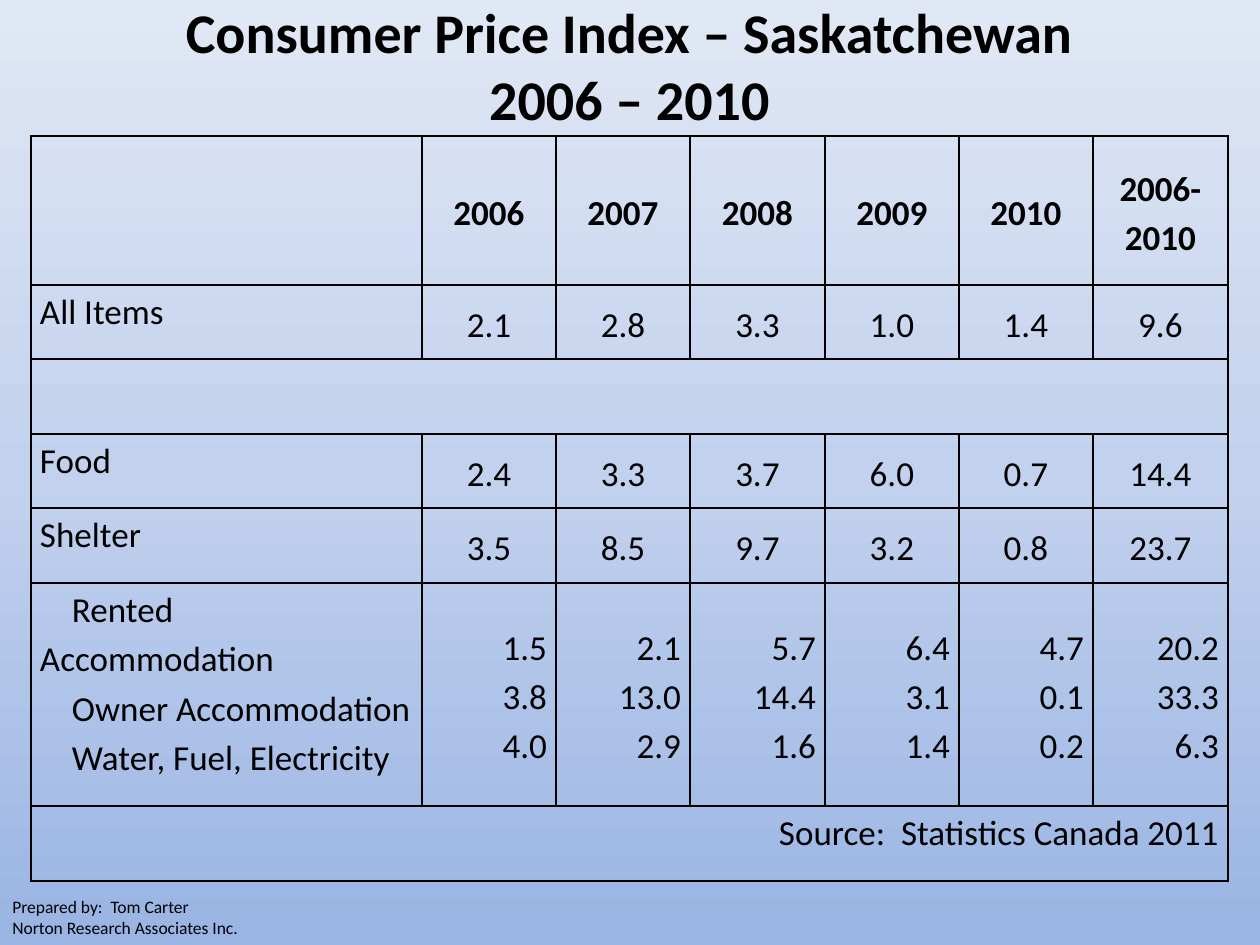
import copy
import itertools
from dataclasses import dataclass

import pptx
import pptx.dml.color
import pptx.enum.text
import pptx.oxml
import pptx.oxml.ns
import pptx.util
from lxml import etree

ALIGN = pptx.enum.text.PP_ALIGN
ANCHOR = pptx.enum.text.MSO_ANCHOR
AUTO_SIZE = pptx.enum.text.MSO_AUTO_SIZE
qn = pptx.oxml.ns.qn

EMU_PER_PX = 914400 / 126
PAGE_SIZE = (1260, 945)


@dataclass(frozen=True)
class Theme:
    font: str = "Calibri"
    ink: str = "000000"
    backdrop: tuple = ("9AB5E4", "C2D1ED", "E1E8F5")
    title_size: int = 32
    table_size: int = 20
    caption_size: int = 10
    table_spacing: float = 1.15
    border_pt: int = 1


def px(length):
    return pptx.util.Emu(round(length * EMU_PER_PX))


def set_all(target, values):
    for name, value in values.items():
        setattr(target, name, value)


def split(total, weights):
    """Share a length by weight into whole px that add up to the total."""
    edges = [0] + [total * part // sum(weights)
                   for part in itertools.accumulate(weights)]
    return [end - start for start, end in zip(edges, edges[1:])]


class SlideBuilder:
    def __init__(self, page, theme):
        self.page = page
        self.theme = theme

    def place(self, shape, left, top, width, height):
        set_all(shape, {"left": px(left), "top": px(top),
                        "width": px(width), "height": px(height)})

    def add_lines(self, frame, lines, size, bold=False, indent=0, **para_format):
        for index, line in enumerate(lines):
            para = frame.add_paragraph() if index else frame.paragraphs[0]
            set_all(para, para_format)
            if indent:
                para._p.get_or_add_pPr().set("indent", str(px(indent)))
            span = para.add_run()
            span.text = line
            set_all(span.font, {"name": self.theme.font, "bold": bold,
                                "size": pptx.util.Pt(size)})
            span.font.color.rgb = pptx.dml.color.RGBColor.from_string(self.theme.ink)

    def backdrop(self):
        """Fill the page with evenly spaced colours, from bottom to top."""
        fill = self.page.background.fill
        fill.gradient()
        fill.gradient_angle = 90
        colours = self.theme.backdrop
        stop_list = self.page.element.find(".//" + qn("a:gsLst"))
        while len(stop_list) < len(colours):
            stop_list.append(copy.deepcopy(stop_list[-1]))
        for index, (stop, colour) in enumerate(zip(fill.gradient_stops, colours)):
            stop.position = index / (len(colours) - 1)
            stop.color.rgb = pptx.dml.color.RGBColor.from_string(colour)

    def title(self, lines, *bounds):
        box = self.page.shapes.title
        self.place(box, *bounds)
        set_all(box.text_frame, {"word_wrap": True, "auto_size": AUTO_SIZE.NONE,
                                 "vertical_anchor": ANCHOR.TOP})
        self.add_lines(box.text_frame, lines, self.theme.title_size, bold=True,
                       alignment=ALIGN.CENTER)

    def caption(self, lines, *bounds):
        box = self.page.shapes.add_textbox(*map(px, bounds))
        box.text_frame.word_wrap = True
        self.add_lines(box.text_frame, lines, self.theme.caption_size)

    def table(self, left, top, widths, heights):
        frame = self.page.shapes.add_table(
            len(heights), len(widths), px(left), px(top),
            px(sum(widths)), px(sum(heights)))
        table = frame.table
        set_all(table, {"first_row": False, "horz_banding": False})
        for column, width in zip(table.columns, widths):
            column.width = px(width)
        for row, height in zip(table.rows, heights):
            row.height = px(height)
        for cell in table.iter_cells():
            self.style_cell(cell)
        return table

    def style_cell(self, cell):
        set_all(cell, {"margin_left": px(9), "margin_right": px(9),
                       "margin_top": 0, "margin_bottom": 0})
        cell.fill.background()
        properties = cell._tc.get_or_add_tcPr()
        for index, side in enumerate(("lnL", "lnR", "lnT", "lnB")):
            line = etree.Element(qn("a:" + side),
                                 w=str(pptx.util.Pt(self.theme.border_pt)))
            fill = etree.SubElement(line, qn("a:solidFill"))
            etree.SubElement(fill, qn("a:srgbClr"), val=self.theme.ink)
            properties.insert(index, line)

    def cell_text(self, cell, lines, align, anchor=ANCHOR.TOP, **text_format):
        cell.vertical_anchor = anchor
        self.add_lines(cell.text_frame, lines, self.theme.table_size,
                       alignment=align, line_spacing=self.theme.table_spacing,
                       **text_format)


YEARS = ["2006", "2007", "2008", "2009", "2010", "2006-2010"]
INDEX_ROWS = {
    1: ("All Items", ["2.1", "2.8", "3.3", "1.0", "1.4", "9.6"]),
    3: ("Food", ["2.4", "3.3", "3.7", "6.0", "0.7", "14.4"]),
    4: ("Shelter", ["3.5", "8.5", "9.7", "3.2", "0.8", "23.7"]),
}
SHELTER_PARTS = {
    "Rented Accommodation": ["1.5", "2.1", "5.7", "6.4", "4.7", "20.2"],
    "Owner Accommodation": ["3.8", "13.0", "14.4", "3.1", "0.1", "33.3"],
    "Water, Fuel, Electricity": ["4.0", "2.9", "1.6", "1.4", "0.2", "6.3"],
}
SPACER_ROW, PARTS_ROW, SOURCE_ROW = 2, 5, 6


def build_price_table(builder):
    widths = [391] + split(806, [1] * len(YEARS))
    heights = split(745, [2, 1, 1, 1, 1, 3, 1])
    table = builder.table(31, 136, widths, heights)
    last_column = len(YEARS)
    for row in (SPACER_ROW, SOURCE_ROW):
        table.cell(row, 0).merge(table.cell(row, last_column))

    for column, year in enumerate(YEARS, 1):
        builder.cell_text(table.cell(0, column), [year], ALIGN.CENTER,
                          ANCHOR.MIDDLE, bold=True)
    for row, (label, values) in INDEX_ROWS.items():
        builder.cell_text(table.cell(row, 0), [label], ALIGN.LEFT)
        for column, value in enumerate(values, 1):
            builder.cell_text(table.cell(row, column), [value], ALIGN.CENTER,
                              ANCHOR.MIDDLE)
    builder.cell_text(table.cell(PARTS_ROW, 0), SHELTER_PARTS, ALIGN.LEFT, indent=32)
    for column, values in enumerate(zip(*SHELTER_PARTS.values()), 1):
        builder.cell_text(table.cell(PARTS_ROW, column), values, ALIGN.RIGHT,
                          ANCHOR.MIDDLE)
    builder.cell_text(table.cell(SOURCE_ROW, 0),
                      ["Source:  Statistics Canada 2011"], ALIGN.RIGHT)


def main():
    deck = pptx.Presentation()
    deck.slide_width, deck.slide_height = map(px, PAGE_SIZE)
    title_only = deck.slide_layouts[5]
    builder = SlideBuilder(deck.slides.add_slide(title_only), Theme())
    builder.backdrop()
    build_price_table(builder)
    builder.title(["Consumer Price Index – Saskatchewan", "2006 – 2010"],
                  137, -9, 985, 186)
    builder.caption(["Prepared by:  Tom Carter", "Norton Research Associates Inc."],
                    0, 890, 252, 55)
    deck.save("out.pptx")


if __name__ == "__main__":
    main()
